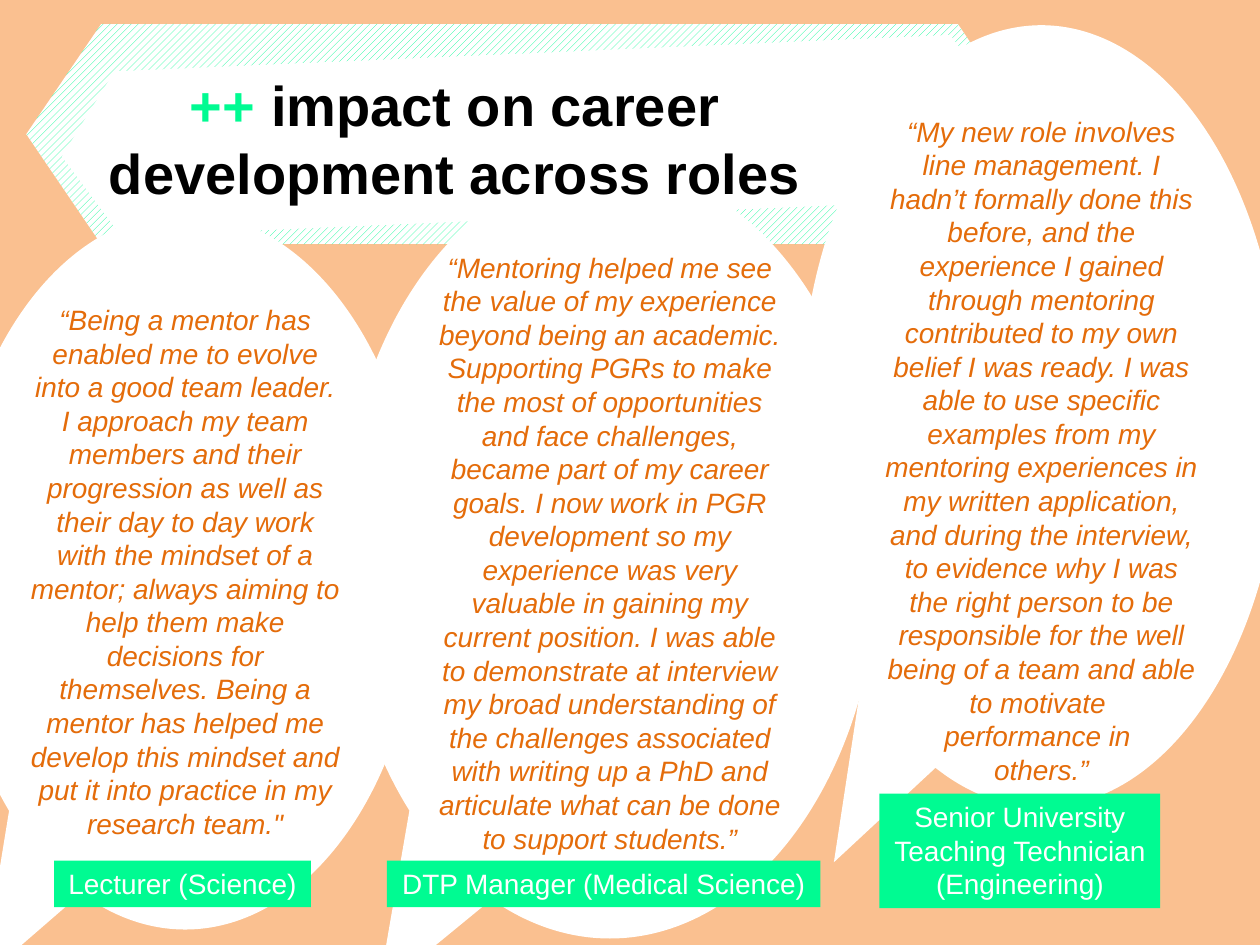
from pptx import Presentation
from pptx.dml.color import RGBColor
from pptx.enum.dml import MSO_PATTERN
from pptx.enum.shapes import MSO_SHAPE
from pptx.enum.text import MSO_ANCHOR, MSO_AUTO_SIZE, PP_ALIGN
from pptx.util import Cm, Pt

PEACH = RGBColor(0xFA, 0xC0, 0x90)
MINT = RGBColor(0x00, 0xFB, 0x92)
ORANGE = RGBColor(0xE4, 0x6C, 0x0A)
WHITE = RGBColor(0xFF, 0xFF, 0xFF)
BLACK = RGBColor(0x00, 0x00, 0x00)
FONT = "Arial"

QUOTES = [
    ((-1.04, 4.29, 9.55, 14.45), 0, [
        "“Being a mentor has enabled me to evolve into a good team leader. "
        "I approach my team members and their progression as well as their "
        "day to day work with the mindset of a mentor; always aiming to help "
        "them make decisions for themselves. Being a mentor has helped me "
        "develop this mindset and put it into practice in my research team.\""]),
    ((6.86, 3.35, 10.87, 15.57), 0, [
        "“Mentoring helped me see the value of my experience beyond being an "
        "academic. Supporting PGRs to make the most of opportunities and face "
        "challenges, became part of my career goals. I now work in PGR "
        "development so my experience was very valuable in gaining my current "
        "position. I was able to demonstrate at interview my broad "
        "understanding of the challenges associated with writing up a PhD and "
        "articulate what can be done to support students.”"]),
    ((16.13, 0.51, 9.73, 15.77), 1.35, [
        "“My new role involves line management. I hadn’t formally done this "
        "before, and the experience I gained through mentoring contributed to "
        "my own belief I was ready. I was able to use specific examples from "
        "my mentoring experiences in my written application, and during the "
        "interview, to evidence why I was the right person to be responsible "
        "for the well being of a team and able to motivate ",
        "performance in ",
        "others.”"]),
]
ROLES = [
    ((17.73, 16, 5.66, 2.31), True,
     "Senior University Teaching Technician (Engineering)"),
    ((7.8, 17.35, 8.74, 0.94), False, "DTP Manager (Medical Science)"),
    ((1.09, 17.35, 5.18, 0.94), False, "Lecturer (Science)"),
]


def add_plain_shape(slide, preset, box, color):
    """Add a preset shape without line or shadow, filled with one colour."""
    shape = slide.shapes.add_shape(preset, *map(Cm, box))
    shape.shadow.inherit = False
    shape.line.fill.background()
    shape.fill.solid()
    shape.fill.fore_color.rgb = color
    return shape


def write_centred(frame, lines, color, italic=False):
    """Write the lines as centred 16 pt paragraphs."""
    frame.text = "\n".join(lines)
    for paragraph in frame.paragraphs:
        paragraph.alignment = PP_ALIGN.CENTER
        for run in paragraph.runs:
            run.font.name = FONT
            run.font.size = Pt(16)
            run.font.italic = italic
            run.font.color.rgb = color


def add_heading(slide, box):
    """Place the hatched banner, its tilted white panel and the title."""
    left, top, width, height = box
    banner = add_plain_shape(slide, MSO_SHAPE.HEXAGON, box, WHITE)
    banner.fill.patterned()
    banner.fill.pattern = MSO_PATTERN.WIDE_UPWARD_DIAGONAL
    banner.fill.fore_color.rgb = MINT
    banner.fill.back_color.rgb = WHITE
    panel = add_plain_shape(
        slide, MSO_SHAPE.HEXAGON,
        (left + 0.71, top + 0.59, width - 1.16, height - 1.12), WHITE)
    panel.rotation = -2.5
    for hexagon in (banner, panel):
        hexagon.adjustments[0] = 0.34

    title = slide.shapes.title
    title.left, title.top = Cm(left - 0.4), Cm(top + 0.82)
    title.width, title.height = Cm(width - 2.21), Cm(height - 1.45)
    frame = title.text_frame
    frame.text = ""
    frame.word_wrap = True
    frame.auto_size = MSO_AUTO_SIZE.NONE
    frame.vertical_anchor = MSO_ANCHOR.TOP
    paragraph = frame.paragraphs[0]
    paragraph.alignment = PP_ALIGN.CENTER
    for words, color in (("++ ", MINT),
                         ("impact on career development across roles", BLACK)):
        run = paragraph.add_run()
        run.text = words
        run.font.name = FONT
        run.font.size = Pt(32)
        run.font.bold = True
        run.font.color.rgb = color
    slide.shapes.element.append(title.element)


def add_quote(slide, box, drop, lines):
    """Place a speech balloon whose text starts lower by the given drop."""
    balloon = add_plain_shape(slide, MSO_SHAPE.OVAL_CALLOUT, box, WHITE)
    balloon.adjustments[0] = -0.43
    balloon.adjustments[1] = 0.57
    frame = balloon.text_frame
    frame.word_wrap = True
    frame.vertical_anchor = MSO_ANCHOR.MIDDLE
    frame.margin_top = Cm(0.13 + drop)
    write_centred(frame, lines, ORANGE, italic=True)


def add_role(slide, box, wraps, role):
    """Place the label naming the speaker's role."""
    label = add_plain_shape(slide, MSO_SHAPE.RECTANGLE, box, MINT)
    frame = label.text_frame
    frame.word_wrap = wraps
    frame.auto_size = MSO_AUTO_SIZE.SHAPE_TO_FIT_TEXT
    frame.vertical_anchor = MSO_ANCHOR.TOP
    write_centred(frame, [role], WHITE)


def main():
    """Build the slide and save it."""
    deck = Presentation()
    deck.slide_width, deck.slide_height = Cm(25.4), Cm(19.05)
    slide = deck.slides.add_slide(deck.slide_layouts[5])
    slide.background.fill.solid()
    slide.background.fill.fore_color.rgb = PEACH
    add_heading(slide, (0.53, 0.48, 20.29, 4.45))
    for quote in QUOTES:
        add_quote(slide, *quote)
    for role in ROLES:
        add_role(slide, *role)
    slide.shapes.element.append(slide.shapes.title.element)
    deck.save("out.pptx")


if __name__ == "__main__":
    main()
